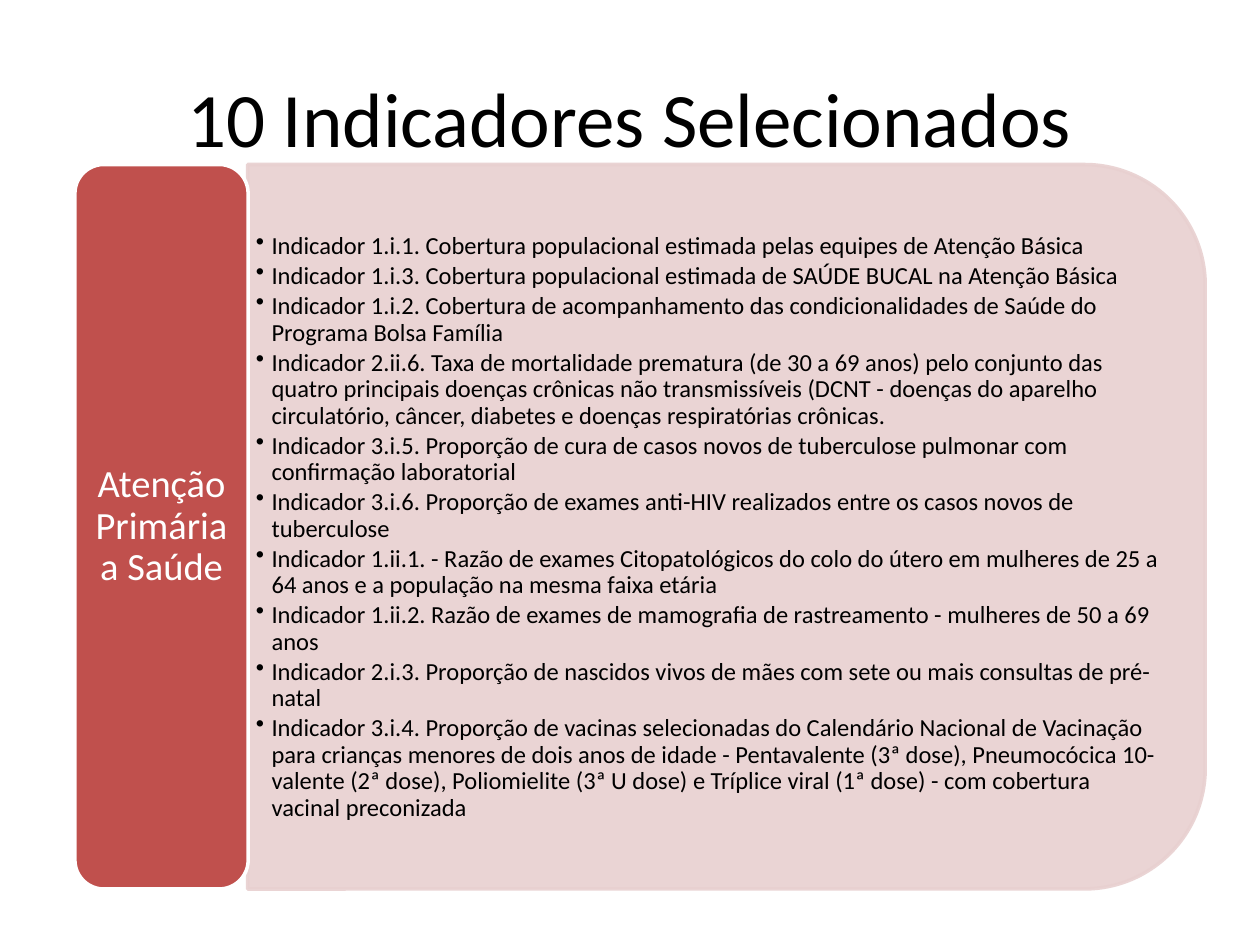
from dataclasses import dataclass

from lxml.etree import SubElement
from pptx import Presentation
from pptx.dml.color import RGBColor
from pptx.enum.shapes import MSO_SHAPE
from pptx.enum.text import MSO_ANCHOR, PP_ALIGN
from pptx.oxml.ns import qn
from pptx.util import Pt


@dataclass(frozen=True)
class Theme:
    font: str = "Calibri"
    black: RGBColor = RGBColor(0x00, 0x00, 0x00)
    white: RGBColor = RGBColor(0xFF, 0xFF, 0xFF)
    red: RGBColor = RGBColor(0xC0, 0x50, 0x4D)
    pink: RGBColor = RGBColor(0xE8, 0xD0, 0xD0)
    title_size: Pt = Pt(44)
    label_size: Pt = Pt(22)
    body_size: Pt = Pt(14)


theme = Theme()

INDICATORS = [
    "Indicador 1.i.1. Cobertura populacional estimada pelas equipes de Atenção Básica",
    "Indicador 1.i.3. Cobertura populacional estimada de SAÚDE BUCAL na Atenção Básica",
    "Indicador 1.i.2. Cobertura de acompanhamento das condicionalidades de Saúde do "
    "Programa Bolsa Família",
    "Indicador 2.ii.6. Taxa de mortalidade prematura (de 30 a 69 anos) pelo conjunto das "
    "quatro principais doenças crônicas não transmissíveis (DCNT - doenças do aparelho "
    "circulatório, câncer, diabetes e doenças respiratórias crônicas.",
    "Indicador 3.i.5. Proporção de cura de casos novos de tuberculose pulmonar com "
    "confirmação laboratorial",
    "Indicador 3.i.6. Proporção de exames anti-HIV realizados entre os casos novos de "
    "tuberculose",
    "Indicador 1.ii.1. - Razão de exames Citopatológicos do colo do útero em mulheres de "
    "25 a 64 anos e a população na mesma faixa etária",
    "Indicador 1.ii.2. Razão de exames de mamografia de rastreamento - mulheres de 50 a "
    "69 anos",
    "Indicador 2.i.3. Proporção de nascidos vivos de mães com sete ou mais consultas de "
    "pré-natal",
    "Indicador 3.i.4. Proporção de vacinas selecionadas do Calendário Nacional de "
    "Vacinação para crianças menores de dois anos de idade - Pentavalente (3ª dose), "
    "Pneumocócica 10-valente (2ª dose), Poliomielite (3ª U dose) e Tríplice viral "
    "(1ª dose) - com cobertura vacinal preconizada",
]


def set_frame(shape, horizontal_margin, vertical_margin):
    frame_format = {
        "word_wrap": True,
        "vertical_anchor": MSO_ANCHOR.MIDDLE,
        "margin_left": horizontal_margin,
        "margin_right": horizontal_margin,
        "margin_top": vertical_margin,
        "margin_bottom": vertical_margin,
    }
    for name, value in frame_format.items():
        setattr(shape.text_frame, name, value)
    return shape.text_frame


def write(paragraph, text, size, color, **paragraph_format):
    """Add one run of text and apply the paragraph attributes given by name."""
    for name, value in paragraph_format.items():
        setattr(paragraph, name, value)
    run = paragraph.add_run()
    run.text = text
    for name, value in {"name": theme.font, "size": size}.items():
        setattr(run.font, name, value)
    run.font.color.rgb = color


presentation = Presentation()
presentation.slide_width, presentation.slide_height = Pt(720), Pt(540)
slide = presentation.slides.add_slide(presentation.slide_layouts[6])

# Title
title = slide.shapes.add_textbox(Pt(36), Pt(21.6), Pt(648), Pt(90))
write(set_frame(title, Pt(7.2), Pt(3.6)).paragraphs[0], "10 Indicadores Selecionados",
      theme.title_size, theme.black, alignment=PP_ALIGN.CENTER)

# Panel and label
panel = slide.shapes.add_shape(
    MSO_SHAPE.ROUND_2_SAME_RECTANGLE, Pt(208.1), Pt(27.4), Pt(414), Pt(547.2))
panel.rotation = 90
label = slide.shapes.add_shape(
    MSO_SHAPE.ROUNDED_RECTANGLE, Pt(42.8), Pt(94), Pt(99), Pt(414))
for shape, fill_color, line_color in (
    (panel, theme.pink, theme.pink),
    (label, theme.red, theme.white),
):
    shape.shadow.inherit = False
    shape.fill.solid()
    shape.fill.fore_color.rgb = fill_color
    shape.line.color.rgb = line_color
    shape.line.width = Pt(2)

# The panel and its outline are 90 % opaque
for color in panel.fill._xPr.iter(qn("a:srgbClr")):
    SubElement(color, qn("a:alpha"), val="90000")

write(set_frame(label, Pt(6.5), Pt(3.6)).paragraphs[0], "Atenção Primária a Saúde",
      theme.label_size, theme.white, alignment=PP_ALIGN.CENTER, line_spacing=0.9)

# Indicator list
indicator_list = slide.shapes.add_textbox(Pt(141.8), Pt(114.5), Pt(527), Pt(373.7))
frame = set_frame(indicator_list, Pt(4.4), Pt(2.2))
for index, indicator in enumerate(INDICATORS):
    paragraph = frame.add_paragraph() if index else frame.paragraphs[0]
    properties = paragraph._p.get_or_add_pPr()
    properties.set("marL", str(Pt(9)))
    properties.set("indent", str(-Pt(9)))
    SubElement(properties, qn("a:buChar"), char="•")
    write(paragraph, indicator, theme.body_size, theme.black, level=1,
          alignment=PP_ALIGN.LEFT, line_spacing=0.9, space_after=Pt(2))

presentation.save("out.pptx")
